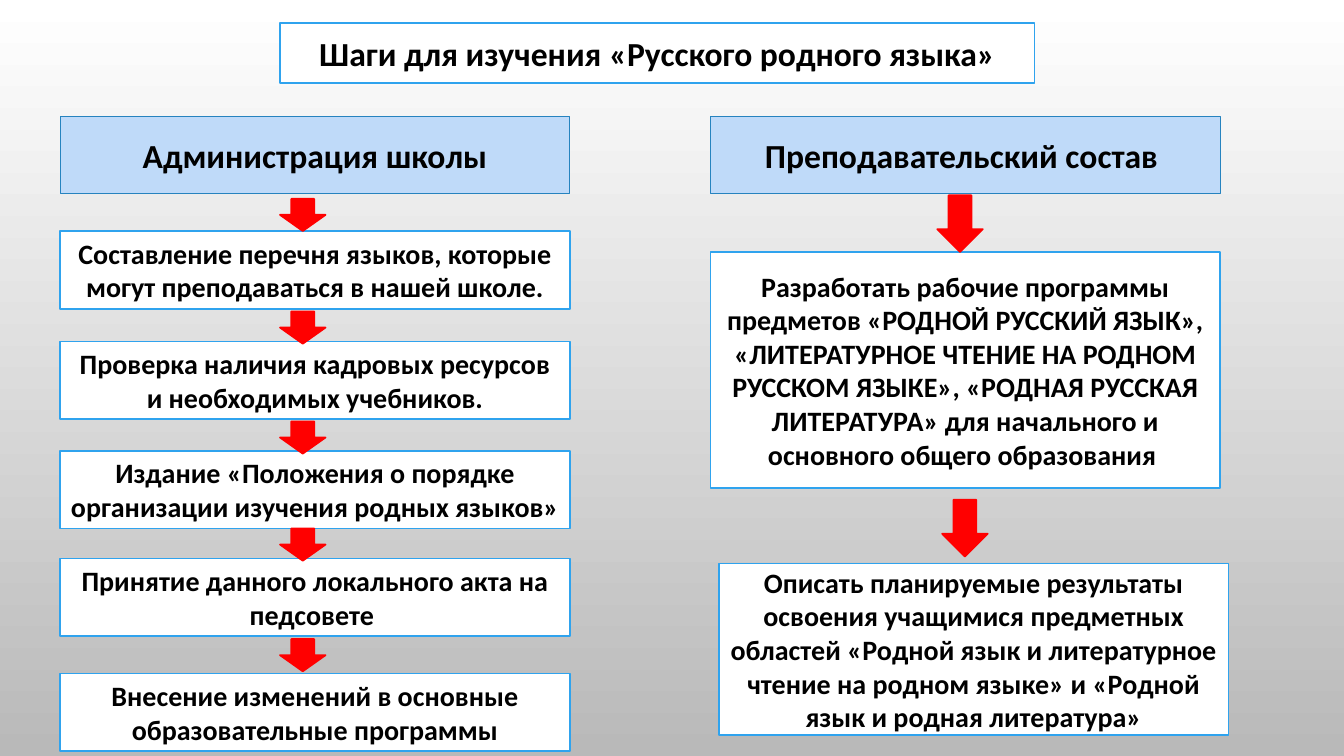
from dataclasses import dataclass

from pptx import Presentation
from pptx.dml.color import RGBColor
from pptx.enum.shapes import MSO_SHAPE
from pptx.enum.text import MSO_ANCHOR, MSO_AUTO_SIZE, PP_ALIGN
from pptx.util import Pt

COLORS = {
    "white": "FFFFFF", "grey": "B9B9B9", "text": "000000", "header": "BFDAF9",
    "header_line": "2683BF", "line": "2FA3EE", "arrow": "FF0000",
}
FONT = {"name": "Calibri", "bold": True}
BOX_W, BOX_H = 364, 55.5
LEFT_X, RIGHT_X, HEADER_Y = 43, 507.5, 83
ARROW_W = 32.5


@dataclass
class Box:
    text: str
    x: float
    y: float
    w: float = BOX_W
    h: float = BOX_H
    size: float = 20
    fill: str = "white"
    line: str = "line"
    weight: float = 1.25


@dataclass
class Arrow:
    x: float
    y: float
    h: float


def rgb(name: str) -> RGBColor:
    return RGBColor.from_string(COLORS[name])


def paint(sp, fill: str, line: str, weight: float) -> None:
    sp.fill.solid()
    sp.fill.fore_color.rgb = rgb(fill)
    sp.line.color.rgb = rgb(line)
    sp.line.width = Pt(weight)


def format_box(sp, box: Box) -> None:
    """Place, colour and fill with text either a placeholder or a shape."""
    place = {"left": box.x, "top": box.y, "width": box.w, "height": box.h}
    for name, value in place.items():
        setattr(sp, name, Pt(value))
    paint(sp, box.fill, box.line, box.weight)
    tf = sp.text_frame
    frame = {"word_wrap": True, "auto_size": MSO_AUTO_SIZE.NONE,
             "vertical_anchor": MSO_ANCHOR.MIDDLE}
    for name, value in frame.items():
        setattr(tf, name, value)
    p = tf.paragraphs[0]
    p.alignment = PP_ALIGN.CENTER
    r = p.add_run()
    r.text = box.text
    for name, value in {**FONT, "size": Pt(box.size)}.items():
        setattr(r.font, name, value)
    r.font.color.rgb = rgb("text")


def add_box(slide, box: Box) -> None:
    sp = slide.shapes.add_shape(MSO_SHAPE.RECTANGLE, 0, 0, Pt(box.w), Pt(box.h))
    sp.shadow.inherit = False
    format_box(sp, box)


def add_arrow(slide, arrow: Arrow) -> None:
    sp = slide.shapes.add_shape(MSO_SHAPE.DOWN_ARROW, Pt(arrow.x), Pt(arrow.y),
                                Pt(ARROW_W), Pt(arrow.h))
    sp.shadow.inherit = False
    paint(sp, "arrow", "arrow", 1.25)


TITLE = Box("Шаги для изучения «Русского родного языка»", 200, 16.5, 539, 43, 24)

HEADERS = [
    Box(text, x, HEADER_Y, size=24, fill="header", line="header_line", weight=0.75)
    for text, x in [("Администрация школы", LEFT_X),
                    ("Преподавательский состав ", RIGHT_X)]
]

ADMIN_STEPS = [
    Box(text, LEFT_X, y) for text, y in [
        ("Составление перечня языков, которые могут преподаваться в нашей школе.", 165),
        ("Проверка наличия кадровых ресурсов и необходимых учебников.", 244),
        ("Издание «Положения о порядке организации изучения родных языков»", 322),
        ("Принятие данного локального акта на педсовете ", 399),
        ("Внесение изменений в основные образовательные программы", 481),
    ]
]

TEACHER_STEPS = [
    Box("Разработать рабочие программы предметов «РОДНОЙ РУССКИЙ ЯЗЫК», "
        "«ЛИТЕРАТУРНОЕ ЧТЕНИЕ НА РОДНОМ РУССКОМ ЯЗЫКЕ», «РОДНАЯ РУССКАЯ "
        "ЛИТЕРАТУРА» для начального и основного общего образования ",
        RIGHT_X, 180, h=168.5),
    Box("Описать планируемые результаты освоения учащимися предметных областей "
        "«Родной язык и литературное чтение на родном языке» и «Родной язык и "
        "родная литература»", 513.5, 402.5, h=122.5),
]

ARROWS = [Arrow(200, y, 23) for y in (142, 222.5, 301, 377.5, 456.5)]
ARROWS += [Arrow(669.5, 139.5, 40.5), Arrow(673, 357, 40.5)]


def main() -> None:
    prs = Presentation()
    prs.slide_width, prs.slide_height = Pt(960), Pt(540)
    slide = prs.slides.add_slide(prs.slide_layouts[5])

    # Background: white at the top to grey at the bottom
    bg = slide.background.fill
    bg.gradient()
    bg.gradient_angle = 270
    for stop, color, position in zip(bg.gradient_stops, ("white", "grey"), (0, 1)):
        stop.color.rgb = rgb(color)
        stop.position = position

    # Title
    format_box(slide.shapes.title, TITLE)

    # Two columns of steps
    for box in HEADERS + ADMIN_STEPS + TEACHER_STEPS:
        add_box(slide, box)

    # Arrows between the steps
    for arrow in ARROWS:
        add_arrow(slide, arrow)

    prs.save("out.pptx")


if __name__ == "__main__":
    main()
